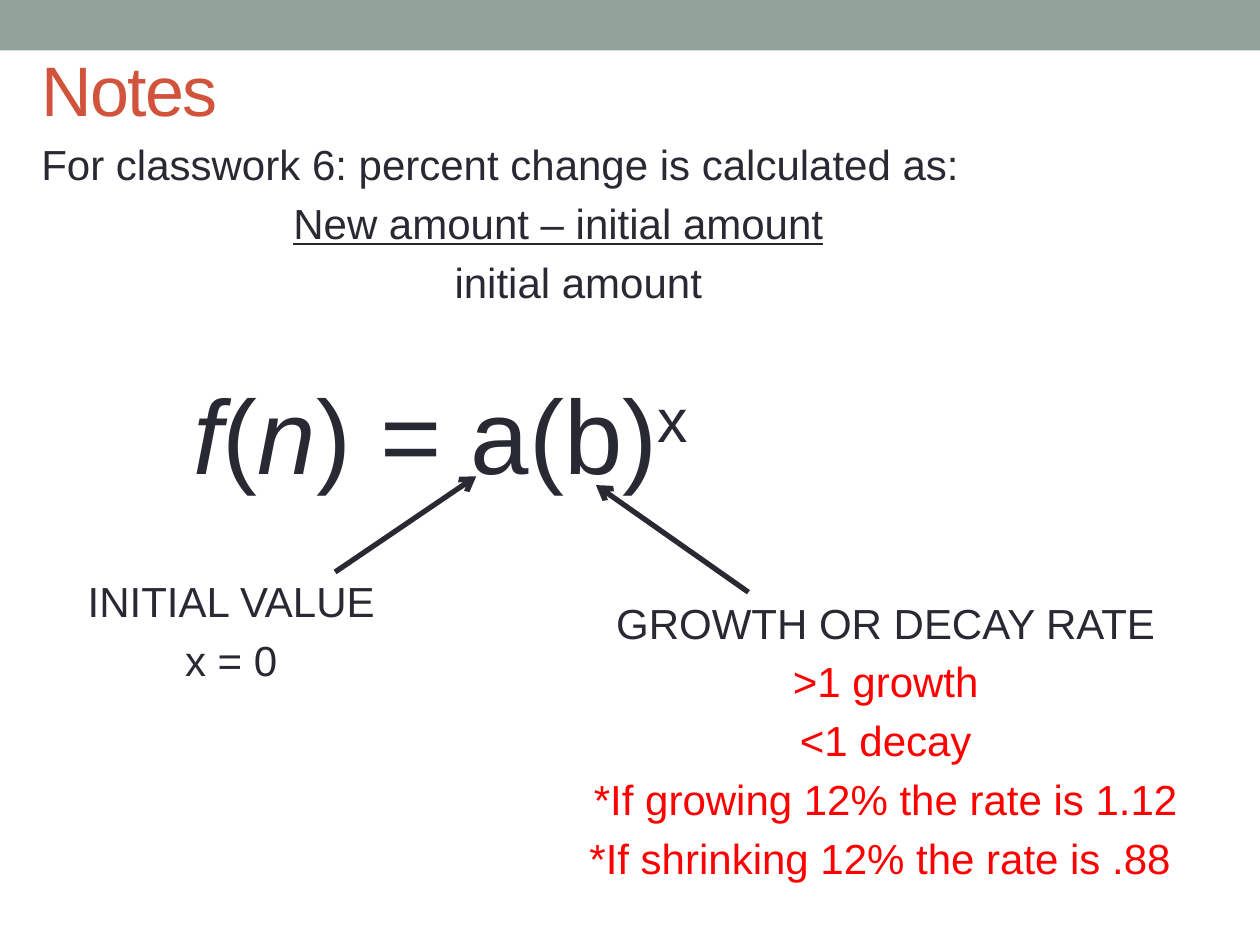
from lxml.etree import SubElement
from pptx import Presentation
from pptx.dml.color import RGBColor
from pptx.enum.shapes import MSO_CONNECTOR, MSO_SHAPE
from pptx.enum.text import MSO_ANCHOR, PP_ALIGN
from pptx.oxml.ns import qn
from pptx.util import Inches, Pt

SAGE = RGBColor(0x93, 0xA2, 0x99)
RUST = RGBColor(0xD2, 0x53, 0x3C)
INK = RGBColor(0x29, 0x29, 0x34)
RED = RGBColor(0xFF, 0x00, 0x00)
FONT = "Arial"
CENTER, LEFT = PP_ALIGN.CENTER, PP_ALIGN.LEFT


def style(paragraph, size, color):
    paragraph.font.name = FONT
    paragraph.font.size = Pt(size)
    paragraph.font.color.rgb = color


def add_header_bar(slide, width):
    bar = slide.shapes.add_shape(MSO_SHAPE.RECTANGLE, 0, 0, width, Inches(0.4))
    bar.shadow.inherit = False
    bar.fill.solid()
    bar.fill.fore_color.rgb = SAGE
    bar.line.fill.background()


def set_title(slide, text):
    title = slide.shapes.title
    title.left, title.top = Inches(0.23), Inches(0.16)
    title.width, title.height = Inches(9.54), Inches(1.08)
    frame = title.text_frame
    frame.text = text
    frame.vertical_anchor = MSO_ANCHOR.MIDDLE
    heading = frame.paragraphs[0]
    heading.alignment = LEFT
    style(heading, 40, RUST)
    heading.runs[0].font._element.set("spc", "-100")


def add_frame(slide, left, top, width, height):
    box = slide.shapes.add_textbox(*map(Inches, (left, top, width, height)))
    box.text_frame.word_wrap = True
    return box.text_frame


def add_lines(frame, lines):
    """Fill a frame from (text, colour, alignment, left indent in inches) rows."""
    for index, (text, color, alignment, indent) in enumerate(lines):
        line = frame.add_paragraph() if index else frame.paragraphs[0]
        line.text = text
        properties = line._p.get_or_add_pPr()
        properties.set("marL", str(Inches(indent)))
        space_before = SubElement(properties, qn("a:spcBef"))
        SubElement(space_before, qn("a:spcPct"), val="20000")
        line.alignment = alignment
        style(line, 24, color)


def add_formula(slide):
    formula = add_frame(slide, 1.44, 2.88, 4.5, 1.11).paragraphs[0]
    style(formula, 60, INK)
    for text, italic in (("f", True), ("(", False), ("n", True),
                         (") = a(b)", False), ("x", False)):
        part = formula.add_run()
        part.text = text
        part.font.italic = italic
    exponent = formula.runs[-1]
    exponent.font._element.set("baseline", "30000")


def add_arrow(slide, *ends):
    arrow = slide.shapes.add_connector(MSO_CONNECTOR.STRAIGHT, *map(Inches, ends))
    arrow.line.color.rgb = INK
    arrow.line.width = Pt(3)
    SubElement(arrow.line._get_or_add_ln(), qn("a:tailEnd"), type="arrow")
    SubElement(arrow._element.spPr, qn("a:effectLst"))


def main():
    deck = Presentation()
    deck.slide_width, deck.slide_height = Inches(10), Inches(7.5)
    slide = deck.slides.add_slide(deck.slide_layouts[5])

    add_header_bar(slide, deck.slide_width)
    set_title(slide, "Notes")

    percent_change = add_frame(slide, 0.23, 1.05, 9.54, 1.81)
    add_lines(percent_change, [
        ("For classwork 6: percent change is calculated as:", INK, LEFT, 0),
        ("New amount – initial amount", INK, LEFT, 2),
        ("initial amount", INK, LEFT, 3.28),
    ])
    percent_change.paragraphs[1].font.underline = True

    add_lines(add_frame(slide, 0.23, 4.52, 3.21, 1.44), [
        ("INITIAL VALUE", INK, CENTER, 0),
        ("x = 0", INK, CENTER, 0),
    ])
    add_arrow(slide, 2.66, 4.54, 3.78, 3.78)

    add_lines(add_frame(slide, 4.58, 4.69, 4.9, 2.31), [
        ("GROWTH OR DECAY RATE", INK, CENTER, 0),
        (">1 growth", RED, CENTER, 0),
        ("<1 decay", RED, CENTER, 0),
        ("*If growing 12% the rate is 1.12", RED, CENTER, 0),
        ("*If shrinking 12% the rate is .88", RED, LEFT, 0),
    ])
    add_arrow(slide, 5.94, 4.7, 4.73, 3.85)

    add_formula(slide)
    deck.save("out.pptx")


if __name__ == "__main__":
    main()
